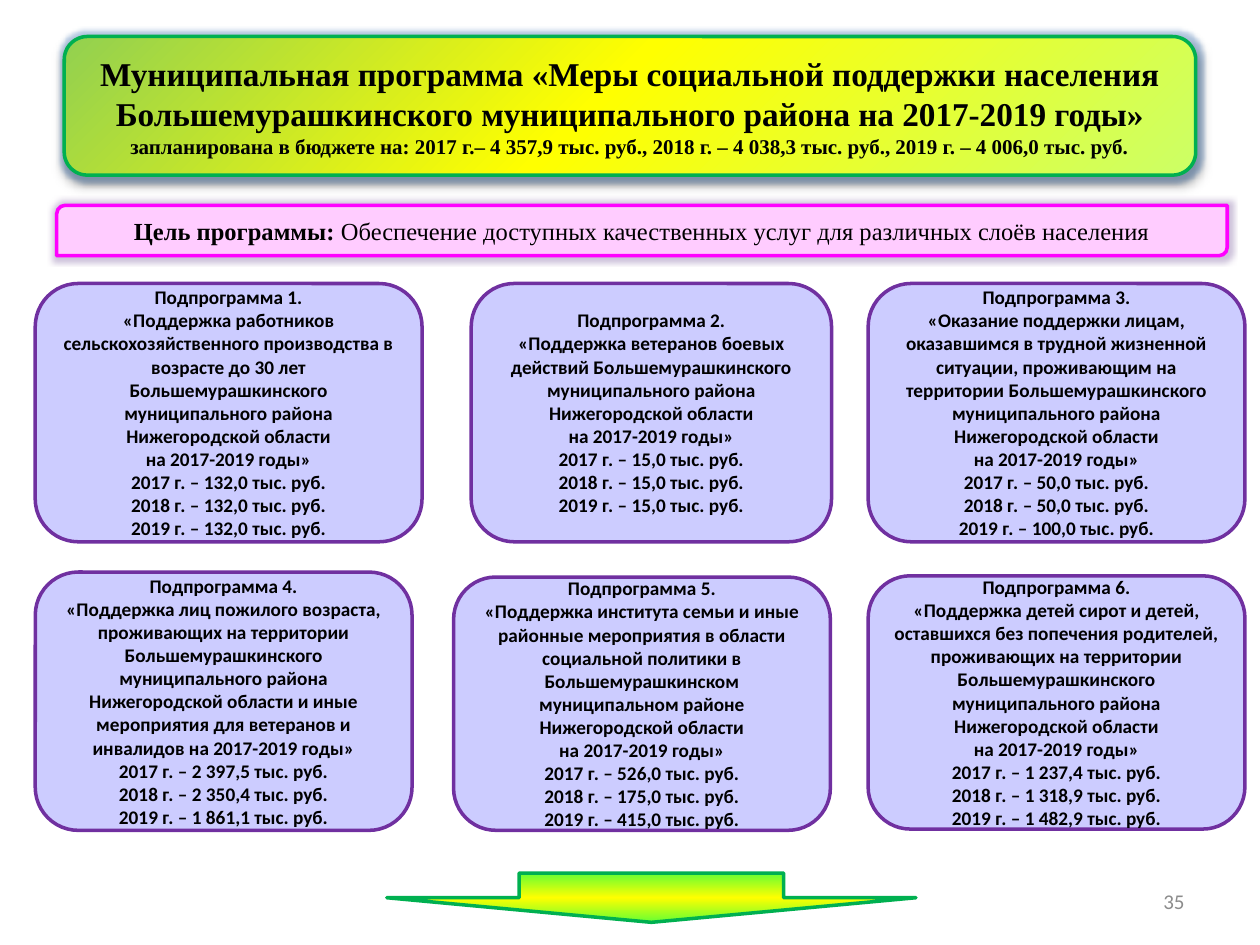
from copy import deepcopy
from dataclasses import dataclass

from lxml.etree import SubElement
from pptx import Presentation
from pptx.dml.color import RGBColor
from pptx.enum.shapes import MSO_SHAPE as Shape
from pptx.enum.text import MSO_ANCHOR as Anchor, PP_ALIGN as Align
from pptx.oxml.ns import qn
from pptx.util import Inches, Pt


@dataclass(frozen=True)
class Theme:
    serif: str = "Times New Roman"
    sans: str = "Calibri"
    title: int = 19
    goal: int = 14
    small: int = 12
    card: int = 11
    line: int = 2
    ink: str = "000000"
    muted: str = "8C8C8C"
    green: str = "00B050"
    magenta: str = "FF00FF"
    purple: str = "7030A0"
    pink: str = "FFCCFF"
    lilac: str = "CCCCFF"
    blue_glow: str = "4F81BD"
    purple_glow: str = "8064A2"
    banner: tuple = ((0, "CCFF66"), (0.53, "FFFF00"), (1, "92D050"))
    arrow: tuple = ((0, "66FF33"), (0.5, "FFFF00"), (1, "66FF33"))


class Board:
    """Slide with a grid of 100 columns by 75 rows."""

    def __init__(self, deck, theme):
        self.theme = theme
        self.cell = deck.slide_width / 100
        self.slide = deck.slides.add_slide(deck.slide_layouts[6])

    def place(self, box):
        return [round(units * self.cell) for units in box]

    def add_text(self, frame, paragraphs, font, color=None, align=Align.CENTER):
        """Each paragraph is a list of (text, size, bold) runs."""
        frame.word_wrap = True
        frame.vertical_anchor = Anchor.MIDDLE
        for index, runs in enumerate(paragraphs):
            paragraph = frame.add_paragraph() if index else frame.paragraphs[0]
            paragraph.alignment = align
            for text, size, bold in runs:
                run = paragraph.add_run()
                run.text = text
                run.font.name, run.font.size, run.font.bold = font, Pt(size), bold
                run.font.color.rgb = RGBColor.from_string(color or self.theme.ink)

    def panel(self, kind, box, fill, line):
        panel = self.slide.shapes.add_shape(kind, *self.place(box))
        panel.shadow.inherit = False
        panel.line.color.rgb = RGBColor.from_string(line)
        panel.line.width = Pt(self.theme.line)
        if isinstance(fill, str):
            panel.fill.solid()
            panel.fill.fore_color.rgb = RGBColor.from_string(fill)
        return panel

    def gradient_panel(self, kind, box, stops, angle, line):
        """Panel with a three-stop gradient; the angle runs counter-clockwise."""
        panel = self.panel(kind, box, None, line)
        panel.fill.gradient()
        panel.fill.gradient_angle = angle
        stop_list = next(panel.element.spPr.iter(qn("a:gsLst")))
        stop_list.append(deepcopy(stop_list[0]))
        for stop, (position, color) in zip(panel.fill.gradient_stops, stops):
            stop.position = position
            stop.color.rgb = RGBColor.from_string(color)
        return panel

    def effect(self, panel, tag, color, opacity, **lengths):
        effects = panel.element.spPr.find(qn("a:effectLst"))
        values = {name: str(value) for name, value in lengths.items()}
        effect = SubElement(effects, qn(tag), values)
        tint = SubElement(effect, qn("a:srgbClr"), val=color)
        SubElement(tint, qn("a:alpha"), val=str(opacity * 1000))

    def label(self, box, text, size, color, align):
        label = self.slide.shapes.add_textbox(*self.place(box))
        self.add_text(label.text_frame, [[(text, size, False)]],
                      self.theme.sans, color, align)

    def card(self, number, box, description, amounts):
        theme = self.theme
        budgets = [f"{year} г. – {amount} тыс. руб."
                   for year, amount in zip(YEARS, amounts)]
        lines = [f"Подпрограмма {number}.", *description, *budgets]
        card = self.panel(Shape.ROUNDED_RECTANGLE, box, theme.lilac, theme.purple)
        self.add_text(card.text_frame, [[(line, theme.card, True)] for line in lines],
                      theme.sans)


YEARS = (2017, 2018, 2019)
PERIOD = "на 2017-2019 годы»"
DISTRICT = "Большемурашкинского муниципального района Нижегородской области"

SUBPROGRAMMES = [
    ((2.8, 22.5, 30.7, 20.5),
     ("«Поддержка работников сельскохозяйственного производства в возрасте "
      f"до 30 лет {DISTRICT}", PERIOD),
     ("132,0", "132,0", "132,0")),
    ((37.4, 22.5, 28.6, 20.5),
     (f"«Поддержка ветеранов боевых действий {DISTRICT}", PERIOD),
     ("15,0", "15,0", "15,0")),
    ((68.9, 22.5, 29.9, 20.5),
     ("«Оказание поддержки лицам, оказавшимся в трудной жизненной ситуации, "
      f"проживающим на территории {DISTRICT}", PERIOD),
     ("50,0", "50,0", "100,0")),
    ((2.8, 45.4, 29.9, 20.5),
     (f"«Поддержка лиц пожилого возраста, проживающих на территории {DISTRICT} "
      f"и иные мероприятия для ветеранов и инвалидов {PERIOD}",),
     ("2 397,5", "2 350,4", "1 861,1")),
    ((36, 45.8, 29.9, 20.1),
     ("«Поддержка института семьи и иные районные мероприятия в области "
      "социальной политики в Большемурашкинском муниципальном районе "
      "Нижегородской области", PERIOD),
     ("526,0", "175,0", "415,0")),
    ((68.9, 45.7, 29.9, 20.1),
     ("«Поддержка детей сирот и детей, оставшихся без попечения родителей, "
      f"проживающих на территории {DISTRICT}", PERIOD),
     ("1 237,4", "1 318,9", "1 482,9")),
]


def main():
    deck = Presentation()
    deck.slide_width, deck.slide_height = Inches(10), Inches(7.5)
    theme = Theme()
    board = Board(deck, theme)

    # Page number
    board.label((71.7, 69.5, 23.3, 4), "35", theme.small, theme.muted, Align.RIGHT)

    # Programme banner
    banner = board.gradient_panel(Shape.ROUNDED_RECTANGLE, (5.1, 2.9, 89.8, 11),
                                  theme.banner, 135, theme.green)
    board.effect(banner, "a:glow", theme.blue_glow, 40, rad=Pt(5))
    board.effect(banner, "a:outerShdw", theme.ink, 40,
                 blurRad=Pt(4), dist=Pt(3), dir=90 * 60000, rotWithShape=0)
    board.add_text(banner.text_frame, [
        [("Муниципальная программа «Меры социальной поддержки населения "
          "Большемурашкинского муниципального района на 2017-2019 годы»",
          theme.title, True)],
        [("запланирована в бюджете на: 2017 г.– 4 357,9 тыс. руб., "
          "2018 г. – 4 038,3 тыс. руб., 2019 г. – 4 006,0 тыс. руб.",
          theme.small, True)],
    ], theme.serif)

    # Programme goal
    goal = board.panel(Shape.ROUND_2_DIAG_RECTANGLE, (4.5, 16.3, 92.9, 4),
                       theme.pink, theme.magenta)
    board.effect(goal, "a:glow", theme.purple_glow, 40, rad=Pt(5))
    board.add_text(goal.text_frame, [[
        ("Цель программы: ", theme.goal, True),
        ("Обеспечение доступных качественных услуг для различных слоёв населения",
         theme.goal, False),
    ]], theme.serif)

    # Subprogramme cards
    for number, (box, description, amounts) in enumerate(SUBPROGRAMMES, 1):
        board.card(number, box, description, amounts)

    # Arrow to the next page
    board.gradient_panel(Shape.DOWN_ARROW, (30.7, 69.3, 42, 3.9),
                         theme.arrow, 270, theme.green)

    deck.save("out.pptx")


if __name__ == "__main__":
    main()
